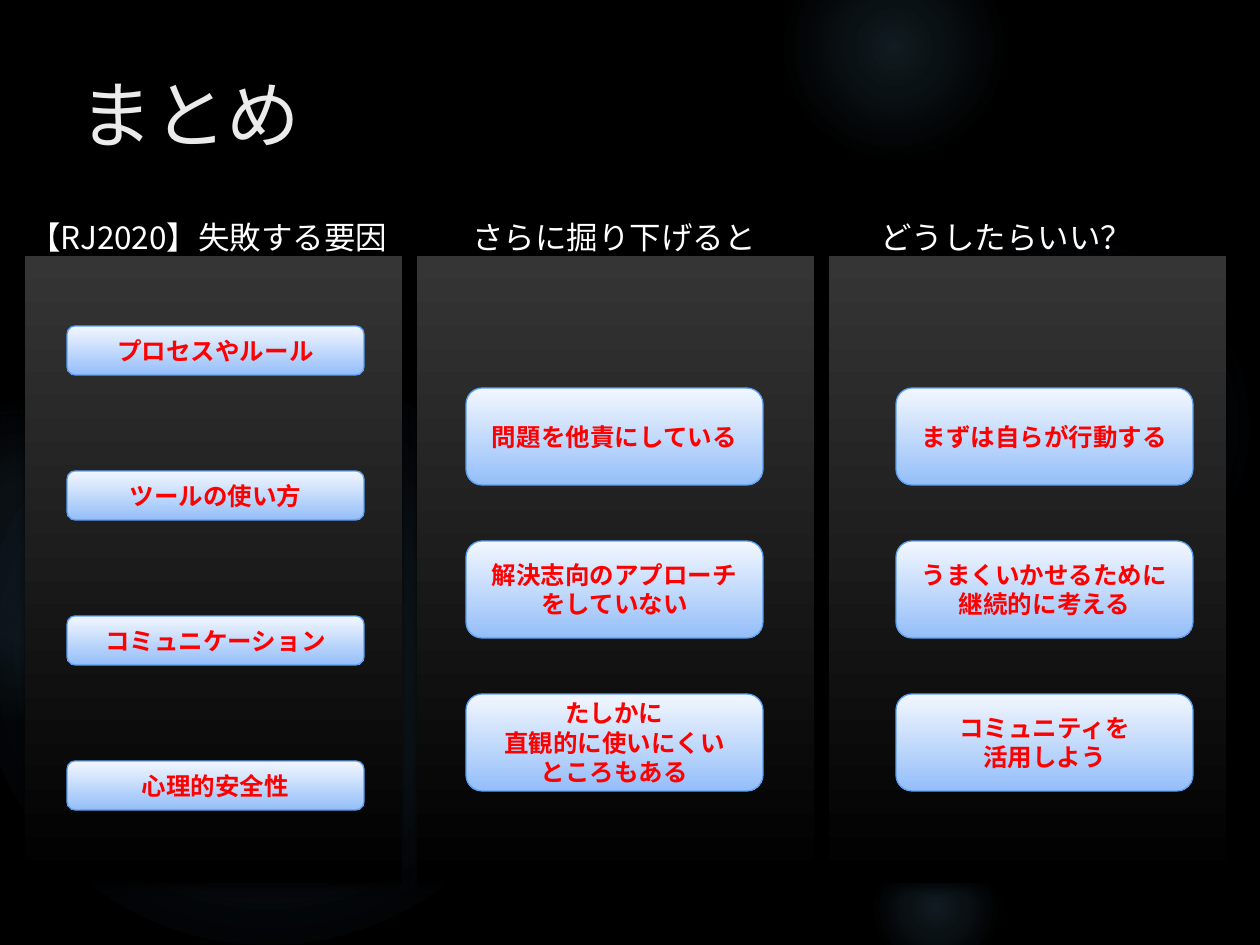
"""Build the three-column summary slide."""
from lxml import etree
from pptx import Presentation
from pptx import util as u
from pptx.dml.color import RGBColor
from pptx.enum import shapes, text
from pptx.oxml.ns import qn

COLORS = {"back": "000000", "glow": "7AC4F0", "title": "EBEBEB",
          "panel_top": "353535", "panel_end": "000000", "card_top": "F3F7FE",
          "card_end": "94BEF9", "edge": "5AA0F5", "card_text": "FF0000",
          "header": "FFFFFF", "shadow": "000000"}
EAST_ASIAN = "Noto Sans CJK JP"

GLOWS = [(868, 231, 388, ((0, 7), (36, 6), (69, 0))),
         (784, -63, 220, ((0, 14), (36, 7), (73, 0))),
         (868, 840, 136, ((0, 14), (36, 7), (66, 0))),
         (-21, 368, 577, ((0, 11), (36, 10), (75, 0))),
         (-116, 399, 325, ((0, 8), (36, 8), (72, 0)))]

COLUMNS = [
    dict(panel=(25, 377), header=(23, 397, "【RJ2020】失敗する要因"),
         card=(67, 326, 49, 145),
         cards=["プロセスやルール", "ツールの使い方", "コミュニケーション", "心理的安全性"]),
    dict(panel=(417, 397), header=(466, 348, "さらに掘り下げると"),
         card=(466, 388, 97, 153),
         cards=["問題を他責にしている", "解決志向のアプローチ\nをしていない",
                "たしかに\n直観的に使いにくい\nところもある"]),
    dict(panel=(829, 397), header=(874, 348, "どうしたらいい？"),
         card=(896, 388, 97, 153),
         cards=["まずは自らが行動する", "うまくいかせるために\n継続的に考える",
                "コミュニティを\n活用しよう"]),
]


def px(*values):
    """Turn pixel lengths into EMU."""
    return [u.Emu(round(v * 914400 / 126)) for v in values]


def node(parent, tag, **attrs):
    """Append a DrawingML element with the given attributes."""
    return etree.SubElement(parent, qn("a:" + tag), {k: str(v) for k, v in attrs.items()})


def color(parent, name, alpha=100):
    """Append a colour with an opacity in percent."""
    clr = node(parent, "srgbClr", val=COLORS[name])
    if alpha < 100:
        node(clr, "alpha", val=alpha * 1000)


class Deck:
    """Hold the style and the current slide."""

    def __init__(self, prs):
        """Add a title-only slide on a plain background."""
        prs.slide_width, prs.slide_height = px(1260, 945)
        self.s = prs.slides.add_slide(prs.slide_layouts[5])
        fill = self.s.background.fill
        fill.solid()
        fill.fore_color.rgb = RGBColor.from_string(COLORS["back"])

    def label(self, tf, content, size, font, ink, bold=False, align=None, spacing=None):
        """Fill a frame with one styled paragraph per line of content."""
        for i, line in enumerate(content.split("\n")):
            p = tf.paragraphs[0] if i == 0 else tf.add_paragraph()
            p.alignment, p.line_spacing = align, spacing
            r = p.add_run()
            r.text = line
            for key, value in dict(size=u.Pt(size), name=font, bold=bold).items():
                setattr(r.font, key, value)
            r.font.color.rgb = RGBColor.from_string(COLORS[ink])
            node(r._r.get_or_add_rPr(), "ea", typeface=EAST_ASIAN)

    def frame(self, tf, **values):
        """Set text frame attributes, with small margins unless given."""
        margins = {f"margin_{side}": u.Inches(0.05)
                   for side in ("left", "right", "top", "bottom")}
        for key, value in {**margins, "word_wrap": True, **values}.items():
            setattr(tf, key, value)

    def shape(self, kind, box, stops, radial=False, parent=None):
        """Add a gradient-filled shape without line or shadow."""
        sp = (parent or self.s).shapes.add_shape(kind, *px(*box))
        sp.shadow.inherit = False
        sp.line.fill.background()
        sp.fill.gradient()
        grad = sp._element.spPr.find(qn("a:gradFill"))
        for child in list(grad):
            grad.remove(child)
        stop_list = node(grad, "gsLst")
        for pos, name, alpha in stops:
            color(node(stop_list, "gs", pos=pos * 1000), name, alpha)
        if radial:
            node(node(grad, "path", path="circle"), "fillToRect",
                 l=50000, t=50000, r=50000, b=50000)
        else:
            node(grad, "lin", ang=5400000, scaled=0)
        return sp

    def glow(self, x, y, size, fades):
        """Add a soft round light."""
        self.shape(shapes.MSO_SHAPE.OVAL, (x, y, size, size),
                   [(pos, "glow", alpha) for pos, alpha in fades], radial=True)

    def title(self, content):
        """Place and fill the title."""
        sp = self.s.shapes.title
        sp.left, sp.top, sp.width, sp.height = px(67, 63, 1004, 193)
        self.frame(sp.text_frame, vertical_anchor=text.MSO_ANCHOR.TOP,
                   margin_left=u.Inches(0.1), auto_size=text.MSO_AUTO_SIZE.NONE)
        self.label(sp.text_frame, content, 42, "Quicksand", "title",
                   align=text.PP_ALIGN.LEFT)

    def panel(self, parent, x, width):
        """Add a column backdrop with a drop shadow."""
        sp = self.shape(shapes.MSO_SHAPE.RECTANGLE, (x, 256, width, 627),
                        [(0, "panel_top", 100), (100, "panel_end", 100)], parent=parent)
        effects = sp._element.spPr.find(qn("a:effectLst"))
        color(node(effects, "outerShdw", blurRad=u.Pt(5), dist=u.Pt(3),
                   dir=5400000, rotWithShape=0), "shadow", 60)

    def card(self, parent, box, content):
        """Add a rounded card with a centred label."""
        sp = self.shape(shapes.MSO_SHAPE.ROUNDED_RECTANGLE, box,
                        [(0, "card_top", 100), (100, "card_end", 100)], parent=parent)
        sp.line.color.rgb = RGBColor.from_string(COLORS["edge"])
        sp.line.width = u.Pt(0.75)
        self.frame(sp.text_frame, vertical_anchor=text.MSO_ANCHOR.MIDDLE)
        self.label(sp.text_frame, content, 14, "Arial", "card_text", bold=True,
                   align=text.PP_ALIGN.CENTER)

    def header(self, x, width, content):
        """Add a column heading."""
        tf = self.s.shapes.add_textbox(*px(x, 193, width, 65)).text_frame
        self.frame(tf, auto_size=text.MSO_AUTO_SIZE.SHAPE_TO_FIT_TEXT)
        self.label(tf, content, 18, EAST_ASIAN, "header", spacing=1.5)

    def column(self, panel, header, card, cards):
        """Add a heading above a grouped panel of evenly spaced cards."""
        group = self.s.shapes.add_group_shape()
        self.panel(group, *panel)
        x, y, height, step = card
        for i, content in enumerate(cards):
            self.card(group, (x, y + i * step, 297, height), content)
        self.header(*header)


def main():
    """Build and save the slide."""
    prs = Presentation()
    deck = Deck(prs)
    for glow in GLOWS:
        deck.glow(*glow)
    deck.title("まとめ")
    for column in COLUMNS:
        deck.column(**column)
    prs.save("out.pptx")


if __name__ == "__main__":
    main()
